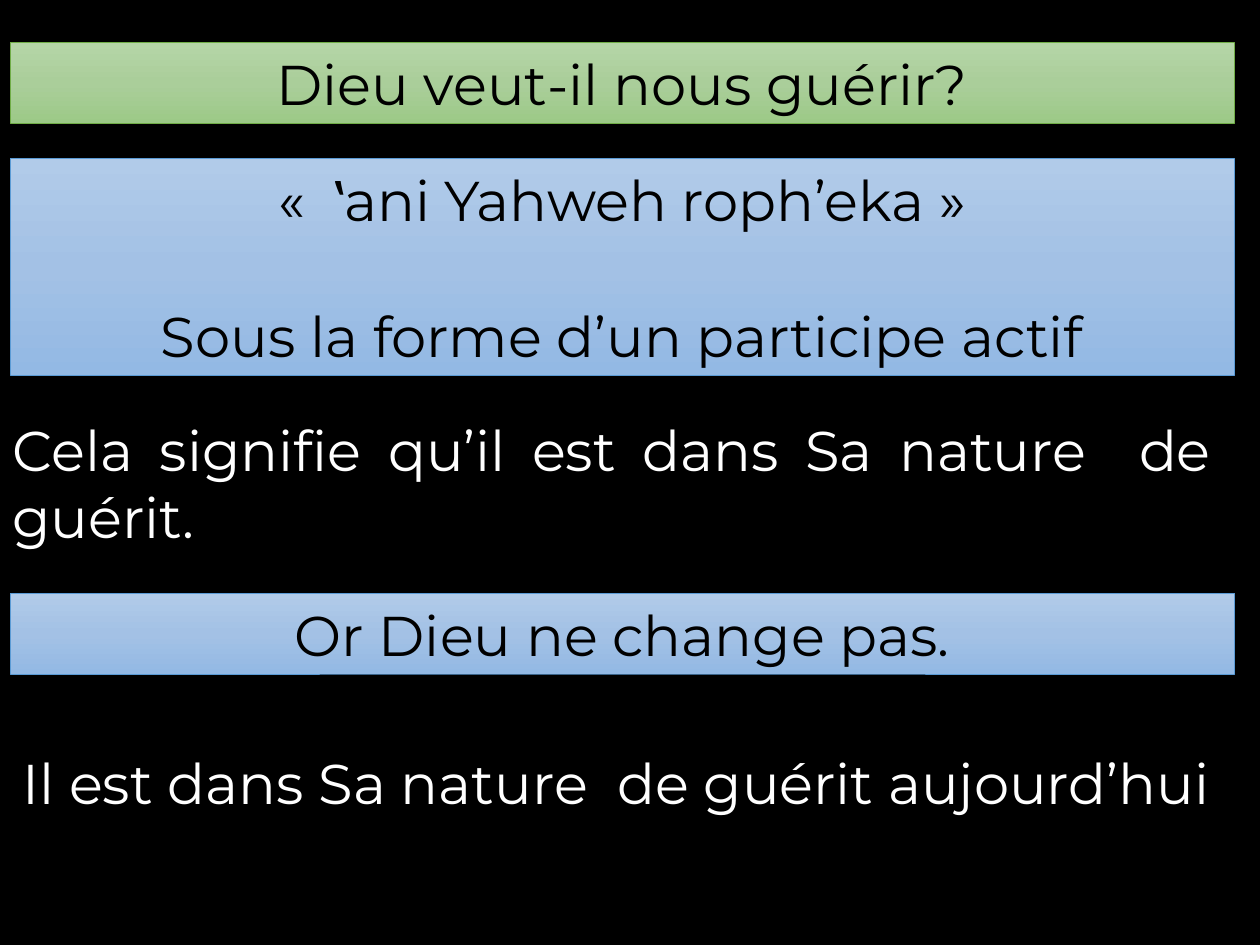
from copy import deepcopy

from pptx import Presentation
from pptx.dml.color import RGBColor
from pptx.enum.shapes import MSO_SHAPE
from pptx.enum.text import MSO_ANCHOR, MSO_AUTO_SIZE, PP_ALIGN
from pptx.util import Inches, Pt

BLACK = RGBColor(0x00, 0x00, 0x00)
WHITE = RGBColor(0xFF, 0xFF, 0xFF)
GREEN_LINE = RGBColor(0x70, 0xAD, 0x47)
GREENS = [RGBColor(0xB5, 0xD5, 0xA7), RGBColor(0xAA, 0xCE, 0x9A), RGBColor(0x9C, 0xC9, 0x87)]
BLUE_LINE = RGBColor(0x5B, 0x9B, 0xD5)
BLUES = [RGBColor(0xB1, 0xCB, 0xE9), RGBColor(0xA3, 0xC1, 0xE5), RGBColor(0x93, 0xB9, 0xE4)]

LEFT, WIDTH = 0.08, 9.72
BANNER_HEIGHT = 0.64
BODY_HEIGHT = 1.18


class SlideBuilder:
    font_name = "Montserrat"
    font_size = Pt(32)

    def __init__(self, slide):
        self.slide = slide
        slide.background.fill.solid()
        slide.background.fill.fore_color.rgb = BLACK

    def set_text(self, shape, lines, color, alignment, anchor, gap=0):
        frame = shape.text_frame
        frame_format = {
            "word_wrap": True,
            "auto_size": MSO_AUTO_SIZE.NONE,
            "vertical_anchor": anchor,
            "margin_left": Inches(0.1),
            "margin_right": Inches(0.1),
            "margin_top": Inches(0.05),
            "margin_bottom": Inches(0.05),
        }
        for name, value in frame_format.items():
            setattr(frame, name, value)
        font_format = {"name": self.font_name, "size": self.font_size, "bold": False}
        for index, line in enumerate(lines):
            paragraph = frame.add_paragraph() if index else frame.paragraphs[0]
            paragraph.alignment = alignment
            paragraph.line_spacing = 1.0
            paragraph.space_before = Pt(gap if index else 0)
            run = paragraph.add_run()
            run.text = line
            run.font.color.rgb = color
            for name, value in font_format.items():
                setattr(run.font, name, value)

    def paint(self, shape, colors, line_color):
        """Give the shape a top-to-bottom gradient of three colours and a thin outline."""
        shape.fill.gradient()
        shape.fill.gradient_angle = 270
        first = shape.element.spPr.xpath(".//a:gs")[0]
        middle = deepcopy(first)
        middle.set("pos", "50000")
        first.addnext(middle)
        for stop, color in zip(shape.fill.gradient_stops, colors):
            stop.color.rgb = color
        shape.line.color.rgb = line_color
        shape.line.width = Pt(0.5)

    def title(self, top, text):
        title = self.slide.shapes.title
        position = {"left": LEFT, "top": top, "width": WIDTH, "height": BANNER_HEIGHT}
        for name, value in position.items():
            setattr(title, name, Inches(value))
        self.paint(title, GREENS, GREEN_LINE)
        self.set_text(title, [text], BLACK, PP_ALIGN.CENTER, MSO_ANCHOR.MIDDLE)

    def banner(self, top, height, lines, gap=0):
        shape = self.slide.shapes.add_shape(
            MSO_SHAPE.RECTANGLE, Inches(LEFT), Inches(top), Inches(WIDTH), Inches(height))
        shape.shadow.inherit = False
        self.paint(shape, BLUES, BLUE_LINE)
        self.set_text(shape, lines, BLACK, PP_ALIGN.CENTER, MSO_ANCHOR.MIDDLE, gap)

    def body(self, left, top, text):
        box = self.slide.shapes.add_textbox(
            Inches(left), Inches(top), Inches(WIDTH), Inches(BODY_HEIGHT))
        self.set_text(box, [text], WHITE, PP_ALIGN.JUSTIFY, MSO_ANCHOR.TOP)


def main():
    presentation = Presentation()
    presentation.slide_width = Inches(10)
    presentation.slide_height = Inches(7.5)
    title_only = presentation.slide_layouts[5]
    builder = SlideBuilder(presentation.slides.add_slide(title_only))

    builder.title(0.34, "Dieu veut-il nous guérir?")
    builder.banner(1.26, 1.72, ["«  ‛ani Yahweh roph’eka »", "Sous la forme d’un participe actif"], gap=39)
    builder.body(0, 3.25, "Cela signifie qu’il est dans Sa nature  de guérit.")
    builder.body(LEFT, 5.89, "Il est dans Sa nature  de guérit aujourd’hui")
    builder.banner(4.71, BANNER_HEIGHT, ["Or Dieu ne change pas."])

    presentation.save("out.pptx")


if __name__ == "__main__":
    main()
